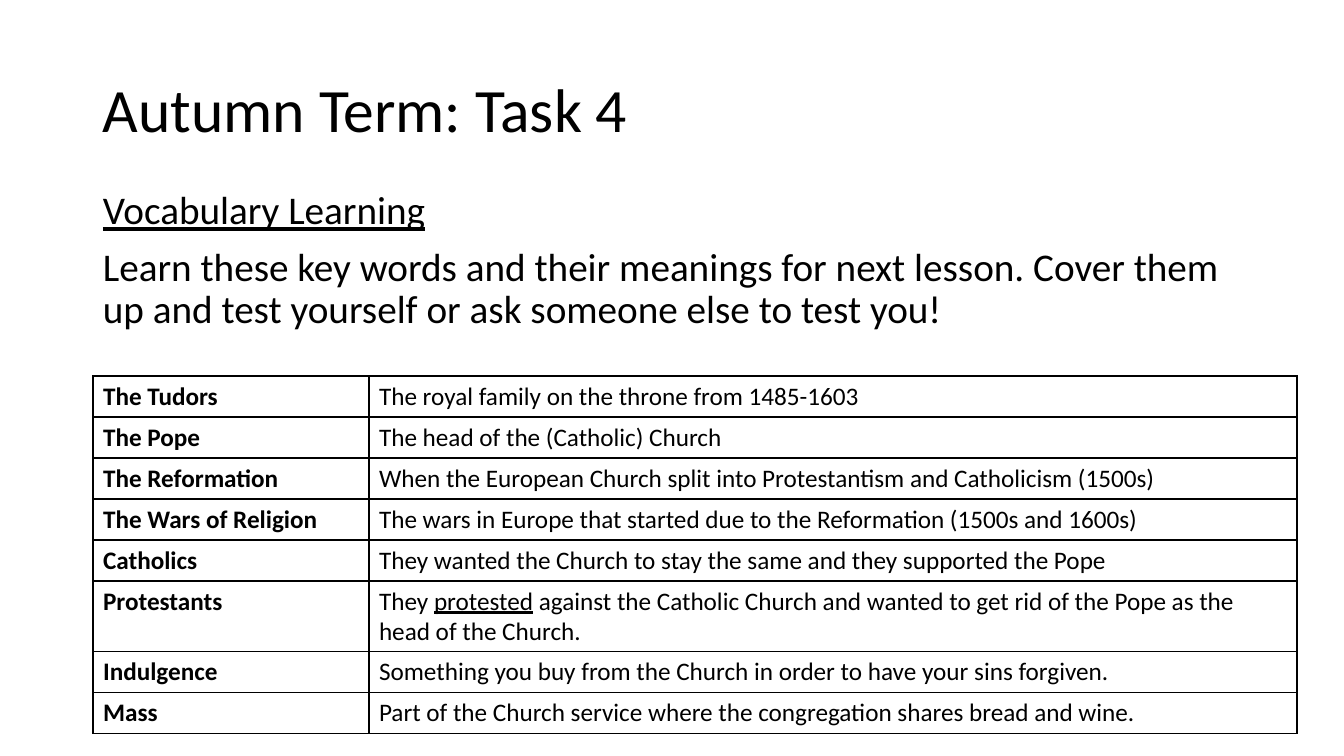
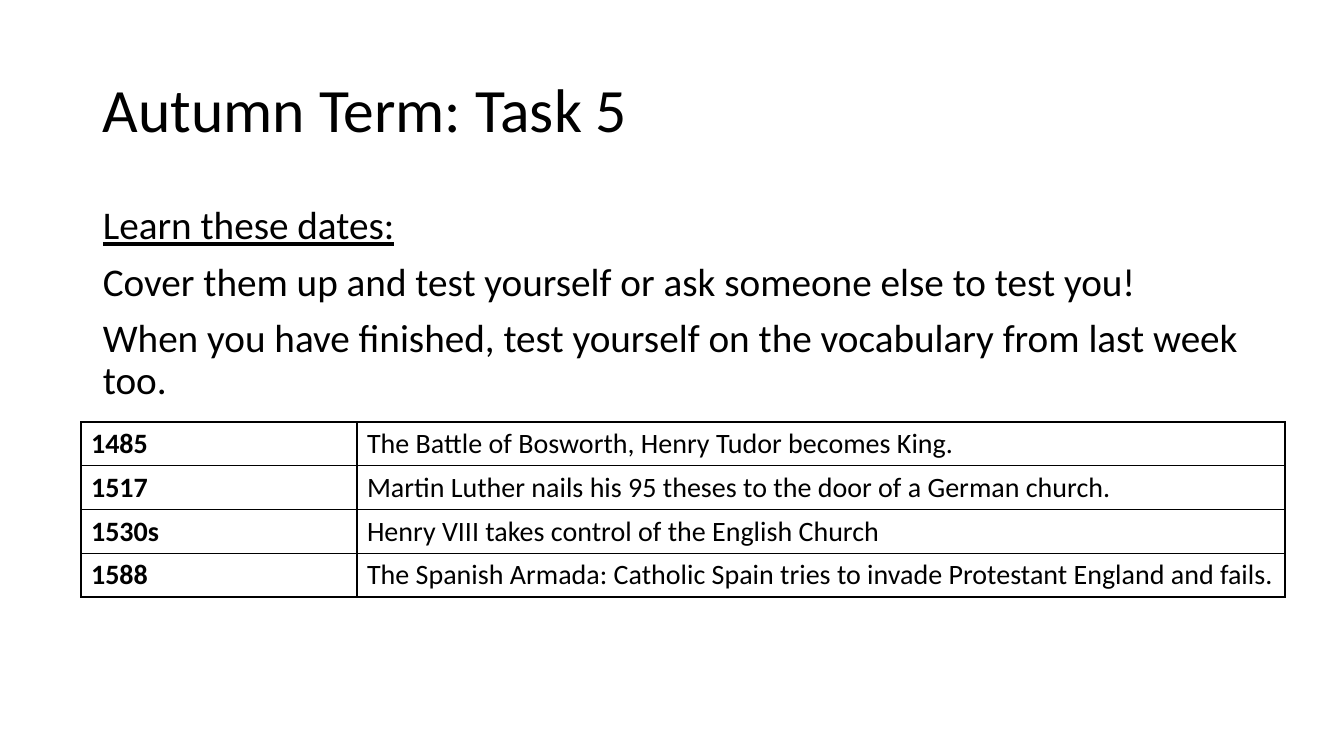
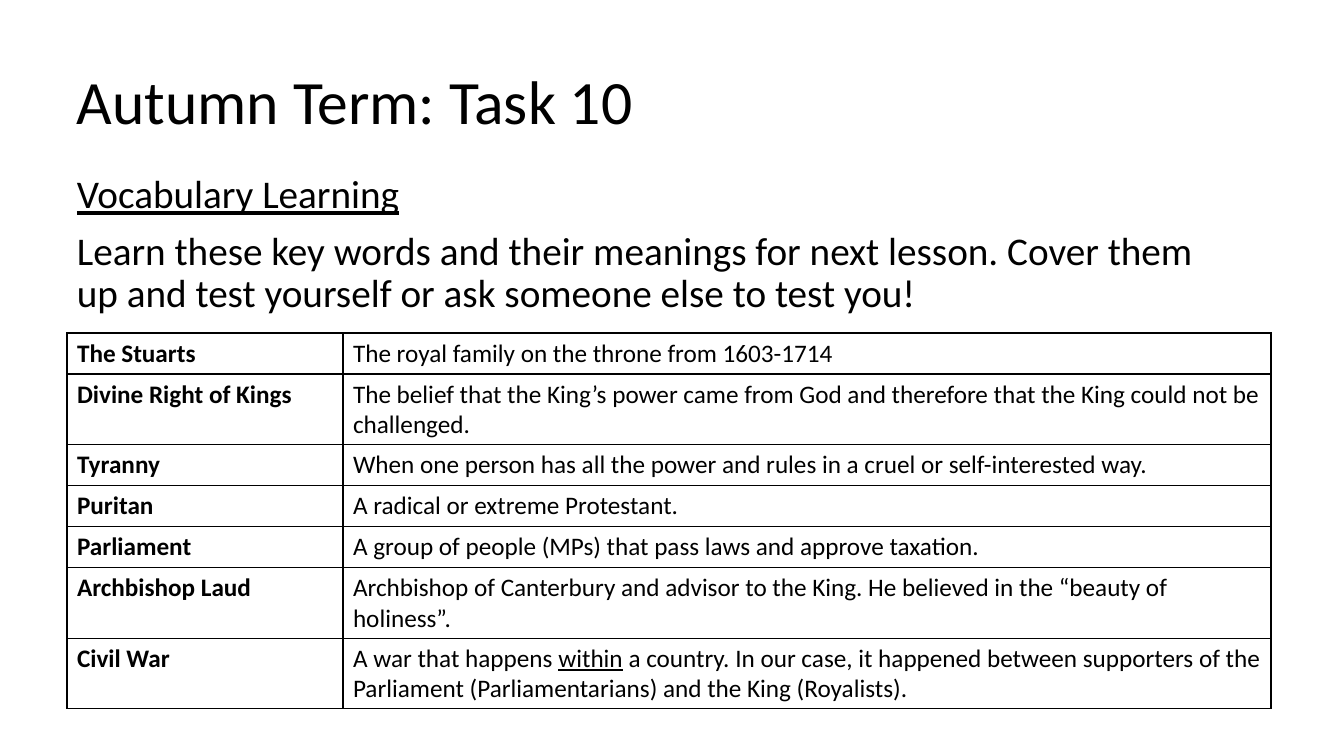
from lxml.etree import SubElement
from pptx import Presentation
from pptx.dml.color import RGBColor
from pptx.enum.text import MSO_ANCHOR
from pptx.oxml.ns import qn
from pptx.util import Emu, Pt

SCALE = 914400 / 100.8
INK = "000000"
FACE = "Calibri"
TITLE = {"size": Pt(44)}
BODY = {"size": Pt(28)}
WIDTH, COLS, ROW = 1159, (276, 928), 41
TEST = "Cover them up and test yourself or ask someone else to test you!"
VOCAB = ["_Vocabulary Learning_",
         "Learn these key words and their meanings for next lesson. " + TEST]

TASKS = [
    {"title": "Autumn Term: Task 4", "head": (93, 40), "body": (93, 186),
     "lines": VOCAB, "grid": (93, 376), "size": 18, "rows": [
         ("The Tudors", "The royal family on the throne from 1485-1603"),
         ("The Pope", "The head of the (Catholic) Church"),
         ("The Reformation", "When the European Church split into Protestantism and Catholicism (1500s)"),
         ("The Wars of Religion", "The wars in Europe that started due to the Reformation (1500s and 1600s)"),
         ("Catholics", "They wanted the Church to stay the same and they supported the Pope"),
         ("Protestants", "They _protested_ against the Catholic Church and wanted to get rid "
                         "of the Pope as the head of the Church."),
         ("Indulgence", "Something you buy from the Church in order to have your sins forgiven."),
         ("Mass", "Part of the Church service where the congregation shares bread and wine.")]},
    {"title": "Autumn Term: Task 5", "head": (93, 40), "body": (93, 201),
     "lines": ["_Learn these dates:_", TEST,
               "When you have finished, test yourself on the vocabulary from last week too."],
     "grid": (81, 422), "size": 20, "rows": [
         ("1485", "The Battle of Bosworth, Henry Tudor becomes King."),
         ("1517", "Martin Luther nails his 95 theses to the door of a German church."),
         ("1530s", "Henry VIII takes control of the English Church"),
         ("1588", "The Spanish Armada: Catholic Spain tries to invade Protestant England and fails.")]},
    {"title": "Autumn Term: Task 10", "head": (67, 32), "body": (67, 170),
     "lines": VOCAB, "grid": (67, 333), "size": 18, "rows": [
         ("The Stuarts", "The royal family on the throne from 1603-1714"),
         ("Divine Right of Kings", "The belief that the King’s power came from God and therefore "
                                   "that the King could not be challenged."),
         ("Tyranny", "When one person has all the power and rules in a cruel or self-interested way."),
         ("Puritan", "A radical or extreme Protestant."),
         ("Parliament", "A group of people (MPs) that pass laws and approve taxation."),
         ("Archbishop Laud", "Archbishop of Canterbury and advisor to the King. "
                             "He believed in the “beauty of holiness”."),
         ("Civil War", "A war that happens _within_ a country. In our case, it happened between "
                       "supporters of the Parliament (Parliamentarians) and the King (Royalists).")]},
]


def px(n):
    """Turn px into EMU."""
    return Emu(round(n * SCALE))


def color(code):
    """Turn a hex string into a colour."""
    return RGBColor.from_string(code)


def style(item, look):
    """Set each format value on an item."""
    for name, value in look.items():
        setattr(item, name, value)


def write(para, text, look):
    """Write text in a paragraph, underlining what stands between underscores."""
    for i, part in enumerate(text.split("_")):
        if part:
            run = para.add_run()
            run.text = part
            style(run.font, {"name": FACE, "underline": i % 2 == 1, **look})
            run.font.color.rgb = color(INK)


def block(slide, box, lines, look, anchor, gap):
    """Place a text block in a box."""
    frame = slide.shapes.add_textbox(*map(px, box)).text_frame
    style(frame, {"word_wrap": True, "vertical_anchor": anchor})
    for i, line in enumerate(lines):
        para = frame.add_paragraph() if i else frame.paragraphs[0]
        style(para, {"line_spacing": 0.9, "space_before": Pt(gap)})
        write(para, line, look)


def border(cell):
    """Draw a thin line on each side of a cell."""
    props = cell._tc.get_or_add_tcPr()
    for side in "LRTB":
        line = SubElement(props, qn(f"a:ln{side}"), w=str(Pt(1)))
        fill = SubElement(line, qn("a:solidFill"))
        SubElement(fill, qn("a:srgbClr"), val=INK)


def grid(slide, spot, rows, size):
    """Place a table of terms and meanings at a spot."""
    box = (*spot, sum(COLS), ROW * len(rows))
    table = slide.shapes.add_table(len(rows), len(COLS), *map(px, box)).table
    style(table, {"first_row": False, "horz_banding": False})
    for col, width in zip(table.columns, COLS):
        col.width = px(width)
    for r, row in enumerate(rows):
        for c, text in enumerate(row):
            cell = table.cell(r, c)
            border(cell)
            cell.fill.background()
            write(cell.text_frame.paragraphs[0], text, {"size": Pt(size), "bold": c == 0})


def page(deck, task):
    """Build the slide of one task."""
    slide = deck.slides.add_slide(deck.slide_layouts[6])
    block(slide, (*task["head"], WIDTH, 146), [task["title"]], TITLE, MSO_ANCHOR.MIDDLE, 0)
    block(slide, (*task["body"], WIDTH, 480), task["lines"], BODY, MSO_ANCHOR.TOP, 10)
    grid(slide, task["grid"], task["rows"], task["size"])


def main():
    """Build and save the deck."""
    deck = Presentation()
    style(deck, {"slide_width": px(1344), "slide_height": px(756)})
    for task in TASKS:
        page(deck, task)
    deck.save("out.pptx")


if __name__ == "__main__":
    main()
